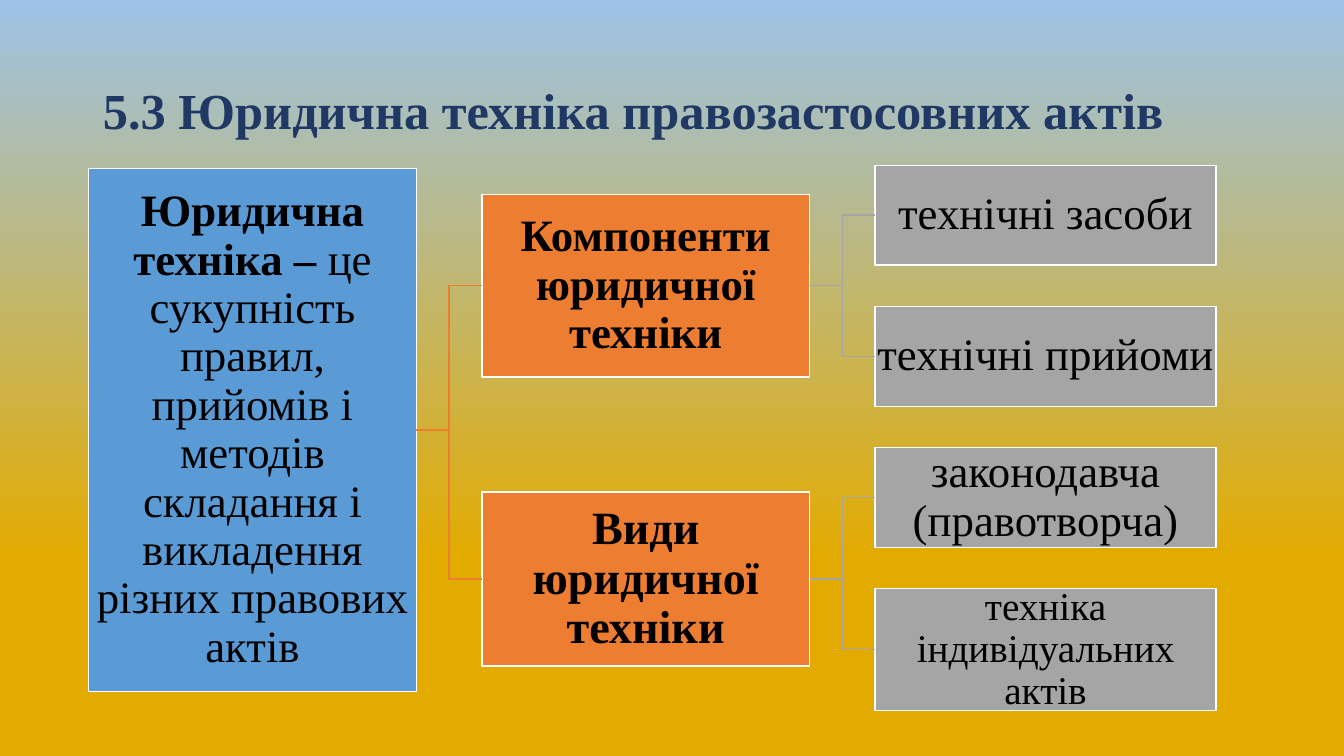
from pptx import Presentation
from pptx.dml.color import RGBColor
from pptx.enum.shapes import MSO_CONNECTOR, MSO_SHAPE
from pptx.enum.text import MSO_ANCHOR, MSO_AUTO_SIZE, PP_ALIGN
from pptx.oxml.ns import qn
from pptx.util import Inches, Pt
from lxml import etree

ELBOW = MSO_CONNECTOR.ELBOW
RECTANGLE = MSO_SHAPE.RECTANGLE
MIDDLE = MSO_ANCHOR.MIDDLE
NO_FIT = MSO_AUTO_SIZE.NONE
LEFT, CENTER = PP_ALIGN.LEFT, PP_ALIGN.CENTER
LEFT_SIDE, RIGHT_SIDE = 1, 3

FONT = "Times New Roman"
COLORS = {
    "sky": "9DC3E6",
    "gold": "E3AB00",
    "title": "203864",
    "definition": "5B9BD5",
    "topic": "ED7D31",
    "detail": "A5A5A5",
    "border": "FFFFFF",
    "text": "000000",
}

DETAIL_TOP, DETAIL_STEP = 1.64, 1.4
TOPICS = [
    ("Компоненти юридичної техніки", 1.93, 1.81, 32,
     [("технічні засоби", 0.99, 32), ("технічні прийоми", 0.99, 32)]),
    ("Види юридичної техніки", 4.88, 1.73, 33,
     [("законодавча (правотворча)", 0.99, 32),
      ("техніка індивідуальних актів", 1.21, 28)]),
]


def color(name):
    return RGBColor.from_string(COLORS[name])


def paint_background(slide):
    fill = slide.background.fill
    fill.gradient()
    fill.gradient_angle = 90
    stops = zip(fill.gradient_stops, [(0.26, "gold"), (1, "sky")])
    for stop, (position, name) in stops:
        stop.position = position
        stop.color.rgb = color(name)


def write_text(frame, runs, size, color_name, align):
    frame.word_wrap = True
    frame.auto_size = NO_FIT
    frame.vertical_anchor = MIDDLE
    paragraph = frame.paragraphs[0]
    paragraph.alignment = align
    paragraph.line_spacing = 0.9
    for text, bold in runs:
        run = paragraph.add_run()
        run.text = text
        run.font.name = FONT
        run.font.size = Pt(size)
        run.font.bold = bold
        run.font.color.rgb = color(color_name)


def add_title(slide, text):
    title = slide.shapes.title
    title.left, title.top = Inches(0.92), Inches(0.4)
    title.width, title.height = Inches(11.5), Inches(1.45)
    write_text(title.text_frame, [(text, True)], 36, "title", LEFT)


def add_box(slide, bounds, level, runs, size):
    box = slide.shapes.add_shape(RECTANGLE, *map(Inches, bounds))
    box.shadow.inherit = False
    box.fill.solid()
    box.fill.fore_color.rgb = color(level)
    box.line.color.rgb = color("border")
    box.line.width = Pt(1)
    frame = box.text_frame
    frame.margin_left = frame.margin_right = Inches(0.02)
    frame.margin_top = frame.margin_bottom = Inches(0.02)
    write_text(frame, runs, size, "text", CENTER)
    return box


def add_branch(slide, parent, child, level):
    branch = slide.shapes.add_connector(ELBOW, 0, 0, 0, 0)
    branch.begin_connect(parent, RIGHT_SIDE)
    branch.end_connect(child, LEFT_SIDE)
    branch.line.color.rgb = color(level)
    branch.line.width = Pt(1)
    etree.SubElement(branch._element.spPr, qn("a:effectLst"))


def add_hierarchy(slide):
    definition = add_box(
        slide, (0.88, 1.67, 3.25, 5.19), "definition",
        [("Юридична техніка – ", True),
         ("це сукупність правил, прийомів і методів складання і "
          "викладення різних правових актів", False)], 32)
    detail_top = DETAIL_TOP
    for topic_text, top, height, size, details in TOPICS:
        topic = add_box(slide, (4.78, top, 3.25, height), "topic",
                        [(topic_text, True)], size)
        add_branch(slide, definition, topic, "topic")
        for detail_text, detail_height, detail_size in details:
            detail = add_box(
                slide, (8.68, detail_top, 3.38, detail_height), "detail",
                [(detail_text, False)], detail_size)
            add_branch(slide, topic, detail, "detail")
            detail_top += DETAIL_STEP


def main():
    deck = Presentation()
    deck.slide_width, deck.slide_height = Inches(13.33), Inches(7.5)
    slide = deck.slides.add_slide(deck.slide_layouts[5])
    paint_background(slide)
    add_title(slide, "5.3 Юридична техніка правозастосовних актів")
    add_hierarchy(slide)
    deck.save("out.pptx")


if __name__ == "__main__":
    main()
